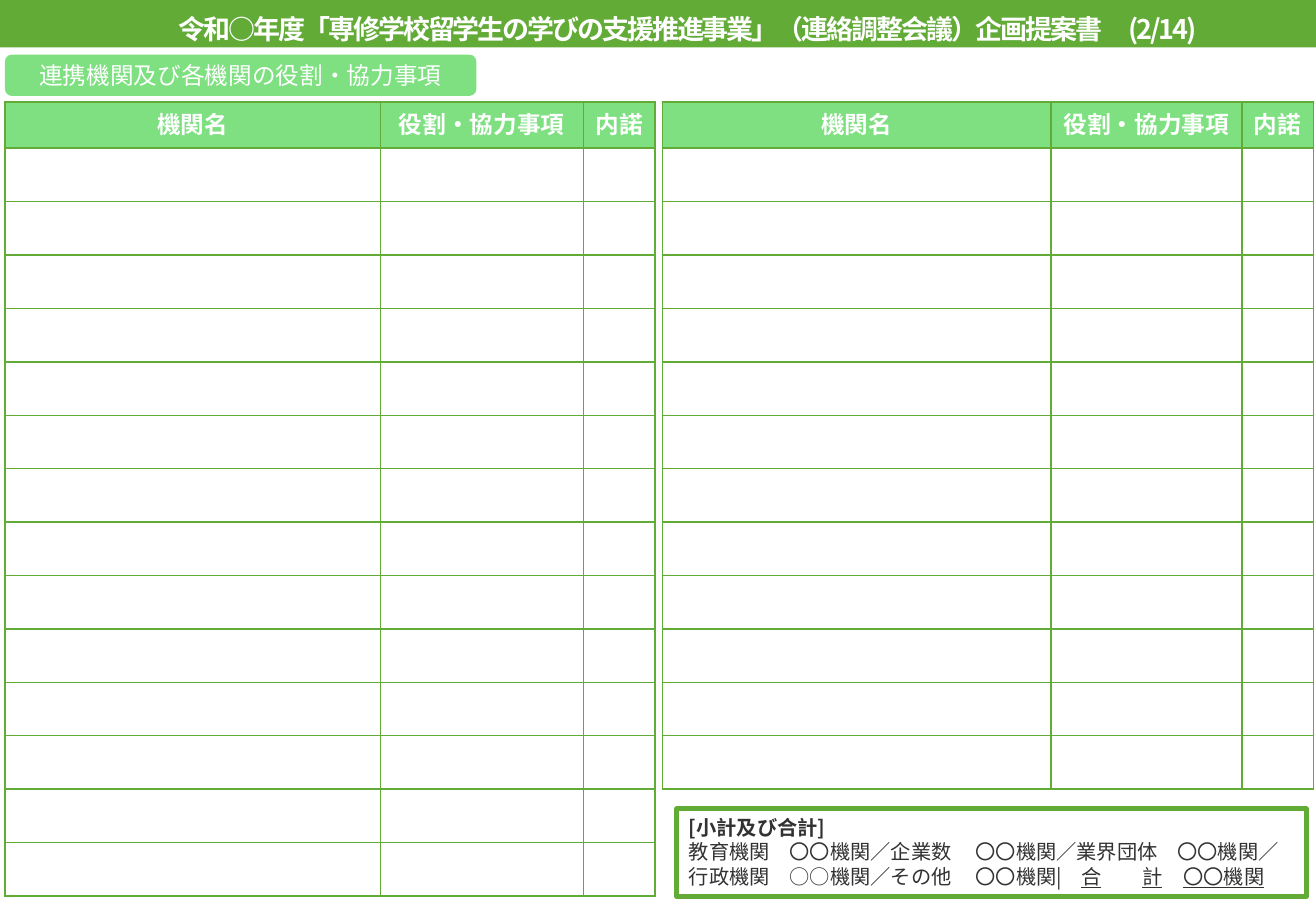
import pptx
import pptx.dml.color
import pptx.enum.shapes
import pptx.enum.text
import pptx.oxml.ns
import pptx.util
from lxml import etree

Inches = pptx.util.Inches
Pt = pptx.util.Pt
RGBColor = pptx.dml.color.RGBColor
Shapes = pptx.enum.shapes.MSO_SHAPE
Align = pptx.enum.text.PP_ALIGN
Anchor = pptx.enum.text.MSO_ANCHOR
qn = pptx.oxml.ns.qn

GREEN = RGBColor(0x62, 0xAB, 0x37)
LIGHT_GREEN = RGBColor(0x7E, 0xE0, 0x81)
WHITE = RGBColor(0xFF, 0xFF, 0xFF)
INK = RGBColor(0x32, 0x32, 0x32)

SANS = "Noto Sans CJK JP"
HEADER_FONT = "Roboto"
HEADERS = ("機関名", "役割・協力事項", "内諾")
HEADER_HEIGHT = 0.38
ROW_HEIGHT = 0.44

# Each summary line: runs of (text, format), then tab stops in inches
SUMMARY = (
    ([("[小計及び合計]", {"bold": True})], ()),
    ([("教育機関\t〇〇機関／企業数\t〇〇機関／業界団体\t〇〇機関／", {})],
     (0.83, 2.36, 4.02)),
    ([("行政機関\t○○機関／その他\t〇〇機関|\t", {}),
      ("合\t計\t〇〇機関", {"underline": True})],
     (0.83, 2.36, 3.23, 3.73, 4.07)),
)


class FormSlide:
    def __init__(self, presentation):
        self.slide = presentation.slides.add_slide(presentation.slide_layouts[6])
        self.style = {"name": SANS, "size": Pt(14)}

    def run(self, paragraph, text, color, spacing=None, **formats):
        run = paragraph.add_run()
        run.text = text
        for name, value in {**self.style, **formats}.items():
            setattr(run.font, name, value)
        run.font.color.rgb = color
        properties = run._r.get_or_add_rPr()
        if spacing is not None:
            properties.set("spc", str(spacing))
        east_asian = etree.SubElement(properties, qn("a:ea"))
        east_asian.set("typeface", run.font.name)

    def shape(self, kind, box, fill=None, line=None):
        shape = self.slide.shapes.add_shape(kind, *map(Inches, box))
        shape.shadow.inherit = False
        if fill is None:
            shape.fill.background()
        else:
            shape.fill.solid()
            shape.fill.fore_color.rgb = fill
        if line is None:
            shape.line.fill.background()
        else:
            shape.line.color.rgb = line
            shape.line.width = Pt(3)
        return shape

    def centered(self, frame, text, **formats):
        frame.vertical_anchor = Anchor.MIDDLE
        paragraph = frame.paragraphs[0]
        paragraph.alignment = Align.CENTER
        self.run(paragraph, text, WHITE, **formats)

    def title(self, box, text):
        frame = self.slide.shapes.add_textbox(*map(Inches, box)).text_frame
        frame.word_wrap = False
        self.centered(frame, text, size=Pt(16), bold=True, spacing=-120)

    def summary(self, box, lines):
        frame = self.shape(Shapes.RECTANGLE, box, line=GREEN).text_frame
        frame.vertical_anchor = Anchor.TOP
        frame.word_wrap = True
        for index, (runs, stops) in enumerate(lines):
            paragraph = frame.add_paragraph() if index else frame.paragraphs[0]
            paragraph.alignment = Align.LEFT
            paragraph.line_spacing = Pt(14.5)
            if stops:
                tabs = etree.SubElement(paragraph._p.get_or_add_pPr(), qn("a:tabLst"))
                for stop in stops:
                    etree.SubElement(tabs, qn("a:tab"), pos=str(Inches(stop)), algn="l")
            for text, formats in runs:
                self.run(paragraph, text, INK, size=Pt(12), **formats)

    def borders(self, cell):
        properties = cell._tc.get_or_add_tcPr()
        for side in ("a:lnL", "a:lnR", "a:lnT", "a:lnB"):
            line = etree.SubElement(properties, qn(side), w=str(Pt(1)))
            fill = etree.SubElement(line, qn("a:solidFill"))
            etree.SubElement(fill, qn("a:srgbClr"), val=str(GREEN))

    def table(self, left, top, widths, blank_rows):
        heights = [HEADER_HEIGHT] + [ROW_HEIGHT] * blank_rows
        box = (left, top, sum(widths), sum(heights))
        table = self.slide.shapes.add_table(
            len(heights), len(widths), *map(Inches, box)).table
        for column, width in zip(table.columns, widths):
            column.width = Inches(width)
        for row, height in zip(table.rows, heights):
            row.height = Inches(height)
        for cell in table.iter_cells():
            cell.margin_top = cell.margin_bottom = Inches(0.02)
            self.borders(cell)
            cell.fill.background()
        for column, text in enumerate(HEADERS):
            cell = table.cell(0, column)
            cell.fill.solid()
            cell.fill.fore_color.rgb = LIGHT_GREEN
            cell.vertical_anchor = Anchor.MIDDLE
            paragraph = cell.text_frame.paragraphs[0]
            paragraph.alignment = Align.CENTER
            self.run(paragraph, text, WHITE, name=HEADER_FONT, bold=True)


def main():
    presentation = pptx.Presentation()
    presentation.slide_width = Inches(10.83)
    presentation.slide_height = Inches(7.5)
    form = FormSlide(presentation)

    # Section label
    label = form.shape(Shapes.ROUNDED_RECTANGLE, (0.04, 0.45, 3.88, 0.34), LIGHT_GREEN)
    form.centered(label.text_frame, "連携機関及び各機関の役割・協力事項")

    # Totals
    form.summary((5.57, 6.66, 5.18, 0.72), SUMMARY)

    # Partner tables
    form.table(0.04, 0.84, (3.09, 1.67, 0.59), 14)
    form.table(5.45, 0.84, (3.2, 1.57, 0.59), 12)

    # Title band
    form.shape(Shapes.RECTANGLE, (0, 0, 10.83, 0.39), GREEN)
    form.title((1.09, 0.05, 9.14, 0.37),
               "令和○年度「専修学校留学生の学びの支援推進事業」（連絡調整会議）企画提案書　(2/14)")

    presentation.save("out.pptx")


if __name__ == "__main__":
    main()
